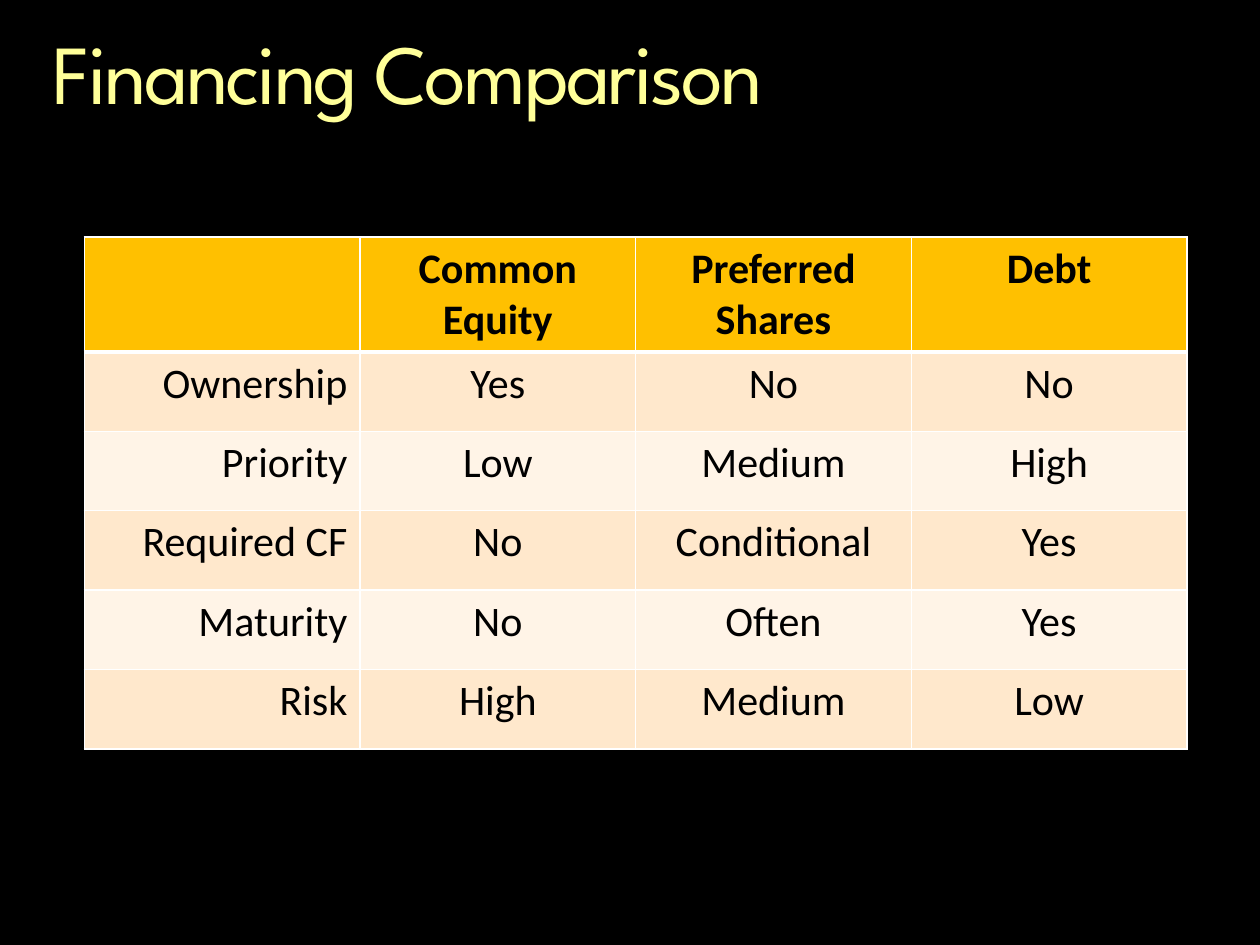
from pptx import Presentation
from pptx.dml.color import RGBColor
from pptx.enum.text import MSO_ANCHOR, MSO_AUTO_SIZE, PP_ALIGN
from pptx.oxml import parse_xml
from pptx.oxml.ns import nsdecls
from pptx.util import Inches, Pt

CENTER, LEFT, RIGHT = PP_ALIGN.CENTER, PP_ALIGN.LEFT, PP_ALIGN.RIGHT
TOP = MSO_ANCHOR.TOP
NO_AUTOFIT = MSO_AUTO_SIZE.NONE

HEADER_FILL = "FFC000"
BAND_FILLS = ["FFE8CC", "FFF4E7"]
COMPARISON = [
    ["", "Common Equity", "Preferred Shares", "Debt"],
    ["Ownership", "Yes", "No", "No"],
    ["Priority", "Low", "Medium", "High"],
    ["Required CF", "No", "Conditional", "Yes"],
    ["Maturity", "No", "Often", "Yes"],
    ["Risk", "High", "Medium", "Low"],
]


def color(value):
    """Turn a hex string into a colour."""
    return RGBColor.from_string(value)


def style_paragraph(paragraph, font_name, size, hex_color, align, bold=False):
    """Set the alignment and font of a paragraph."""
    paragraph.alignment = align
    font = paragraph.font
    font.name, font.size, font.bold = font_name, Pt(size), bold
    font.color.rgb = color(hex_color)


def add_title(slide, text):
    """Place and format the title placeholder."""
    title = slide.shapes.title
    title.left, title.top = Inches(0.42), Inches(0.25)
    title.width, title.height = Inches(9.17), Inches(0.73)
    frame = title.text_frame
    frame.text = text
    frame.word_wrap = True
    frame.auto_size = NO_AUTOFIT
    frame.vertical_anchor = TOP
    frame.margin_left = frame.margin_right = frame.margin_top = frame.margin_bottom = 0
    paragraph = frame.paragraphs[0]
    paragraph.line_spacing = 0.9
    style_paragraph(paragraph, "League Spartan", 48, "FFFF99", LEFT)
    paragraph.runs[0]._r.get_or_add_rPr().set("spc", "-150")


def add_borders(cell, top, bottom):
    """Draw white cell borders, with top and bottom widths in points."""
    properties = cell._tc.get_or_add_tcPr()
    for side, width in (("L", 1), ("R", 1), ("T", top), ("B", bottom)):
        properties.append(parse_xml(
            f'<a:ln{side} {nsdecls("a")} w="{Pt(width)}"><a:solidFill>'
            f'<a:srgbClr val="FFFFFF"/></a:solidFill></a:ln{side}>'))


def fill_cell(cell, text, row, column):
    """Write and format one cell according to its row and column."""
    is_header = row == 0
    add_borders(cell, top=3 if row == 1 else 1, bottom=3 if is_header else 1)
    cell.fill.solid()
    cell.fill.fore_color.rgb = color(HEADER_FILL if is_header else BAND_FILLS[(row - 1) % 2])
    cell.text = text
    align = RIGHT if column == 0 and not is_header else CENTER
    style_paragraph(cell.text_frame.paragraphs[0], "Calibri", 24, "000000", align, is_header)


def add_comparison_table(slide, rows):
    """Add the table with a tall header row and equal body rows."""
    table = slide.shapes.add_table(
        len(rows), len(rows[0]), Inches(0.67), Inches(1.88), Inches(8.75), Inches(4.03)).table
    for row, texts in enumerate(rows):
        table.rows[row].height = Inches(0.63 if row else 0.9)
        for column, text in enumerate(texts):
            fill_cell(table.cell(row, column), text, row, column)


def main():
    """Build the slide and save the deck."""
    deck = Presentation()
    deck.slide_width, deck.slide_height = Inches(10), Inches(7.5)
    slide = deck.slides.add_slide(deck.slide_layouts[5])
    slide.background.fill.solid()
    slide.background.fill.fore_color.rgb = color("000000")
    add_title(slide, "Financing Comparison")
    add_comparison_table(slide, COMPARISON)
    deck.save("out.pptx")


if __name__ == "__main__":
    main()
